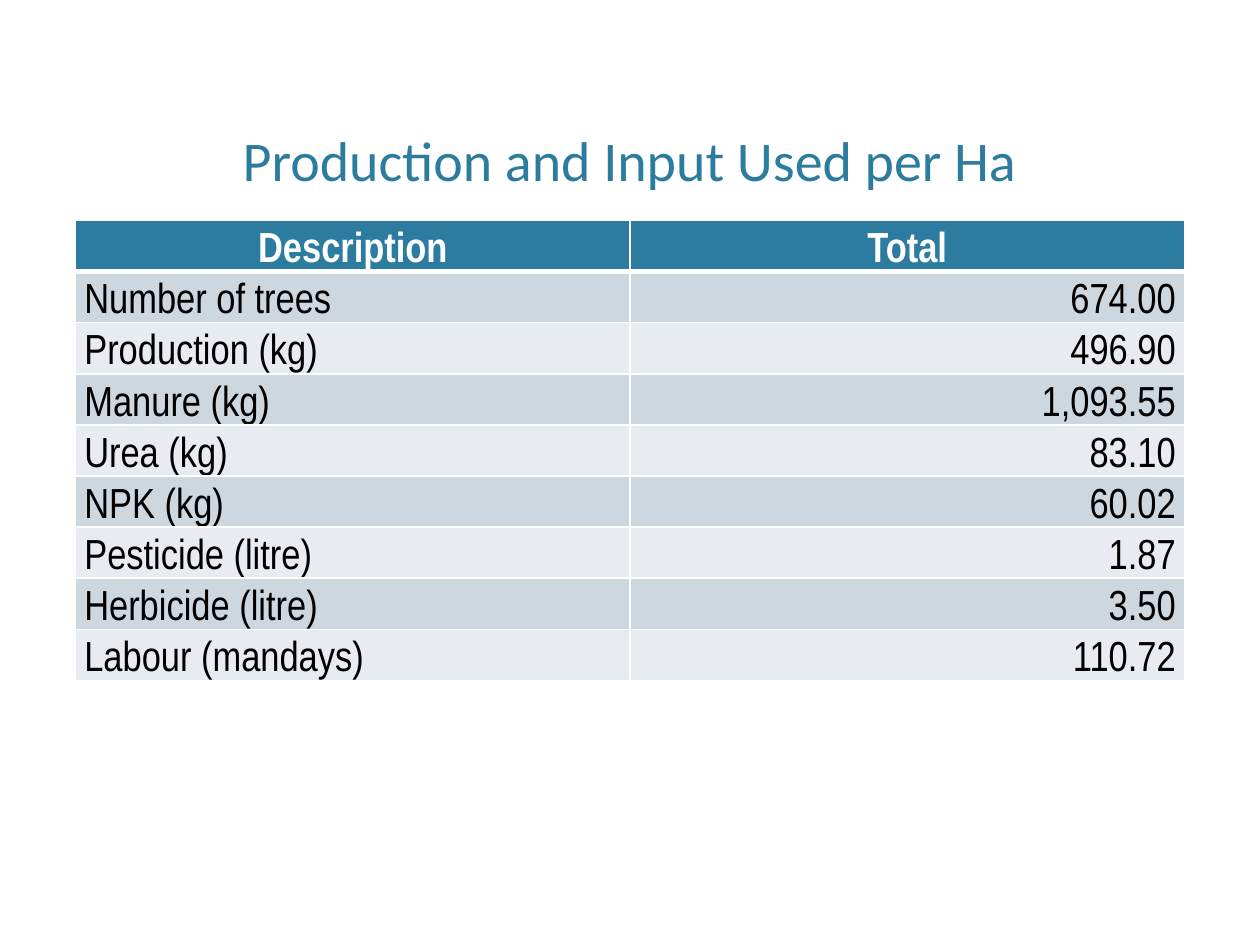
from lxml import etree
from pptx import Presentation
from pptx.dml.color import RGBColor as RGB
from pptx.enum.text import MSO_ANCHOR as Anchor, PP_ALIGN as Align
from pptx.oxml.ns import qn
from pptx.util import Pt

COLORS = {"teal": "2C7C9F", "white": "FFFFFF", "black": "000000",
          "dark": "CDD7DF", "light": "E8ECF0"}
ROWS = [
    ("Description", "Total"),
    ("Number of trees", "674.00"),
    ("Production (kg)", "496.90"),
    ("Manure (kg)", "1,093.55"),
    ("Urea (kg)", "83.10"),
    ("NPK (kg)", "60.02"),
    ("Pesticide (litre)", "1.87"),
    ("Herbicide (litre)", "3.50"),
    ("Labour (mandays)", "110.72"),
]


def color(name):
    return RGB.from_string(COLORS[name])


def put_text(frame, text, font="Arial Narrow", size=24, ink="black",
             bold=False, align=Align.LEFT):
    para = frame.paragraphs[0]
    para.alignment = align
    run = para.add_run()
    run.text = text
    run.font.name, run.font.size, run.font.bold = font, Pt(size), bold
    run.font.color.rgb = color(ink)


def add_title(slide, text, left, top, width, height):
    frame = slide.shapes.add_textbox(
        Pt(left), Pt(top), Pt(width), Pt(height)).text_frame
    frame.word_wrap = True
    frame.vertical_anchor = Anchor.BOTTOM
    put_text(frame, text, font="Calibri", size=32, ink="teal",
             align=Align.CENTER)


def set_edges(cell, **widths):
    props = cell._tc.get_or_add_tcPr()
    for side in "LRTB":
        line = etree.SubElement(props, qn("a:ln" + side),
                                w=str(Pt(widths.get(side, 1))))
        fill = etree.SubElement(line, qn("a:solidFill"))
        etree.SubElement(fill, qn("a:srgbClr"), val=COLORS["white"])


def fill_cell(cell, text, row, col):
    head = row == 0
    # The rule under the header is thicker than the others
    set_edges(cell, B=3 if head else 1, T=3 if row == 1 else 1)
    cell.fill.solid()
    cell.fill.fore_color.rgb = color(
        "teal" if head else "dark" if row % 2 else "light")
    cell.margin_left = cell.margin_right = Pt(5)
    cell.margin_top = cell.margin_bottom = Pt(0)
    cell.vertical_anchor = Anchor.BOTTOM
    align = Align.CENTER if head else (Align.LEFT, Align.RIGHT)[col]
    put_text(cell.text_frame, text, ink="white" if head else "black",
             bold=head, align=align)


def add_grid(slide, rows, left, top, width, height):
    table = slide.shapes.add_table(
        len(rows), len(rows[0]),
        Pt(left), Pt(top), Pt(width), Pt(height)).table
    for line in table.rows:
        line.height = Pt(height / len(rows))
    for r, texts in enumerate(rows):
        for c, text in enumerate(texts):
            fill_cell(table.cell(r, c), text, r, c)


def main():
    deck = Presentation()
    deck.slide_width, deck.slide_height = Pt(720), Pt(540)
    slide = deck.slides.add_slide(deck.slide_layouts[6])
    left, width = 43.2, 633.6
    # Title
    add_title(slide, "Production and Input Used per Ha",
              left, 8.6, width, 105)
    # Table of inputs
    add_grid(slide, ROWS, left, 126, width, 262.8)
    deck.save("out.pptx")


if __name__ == "__main__":
    main()
